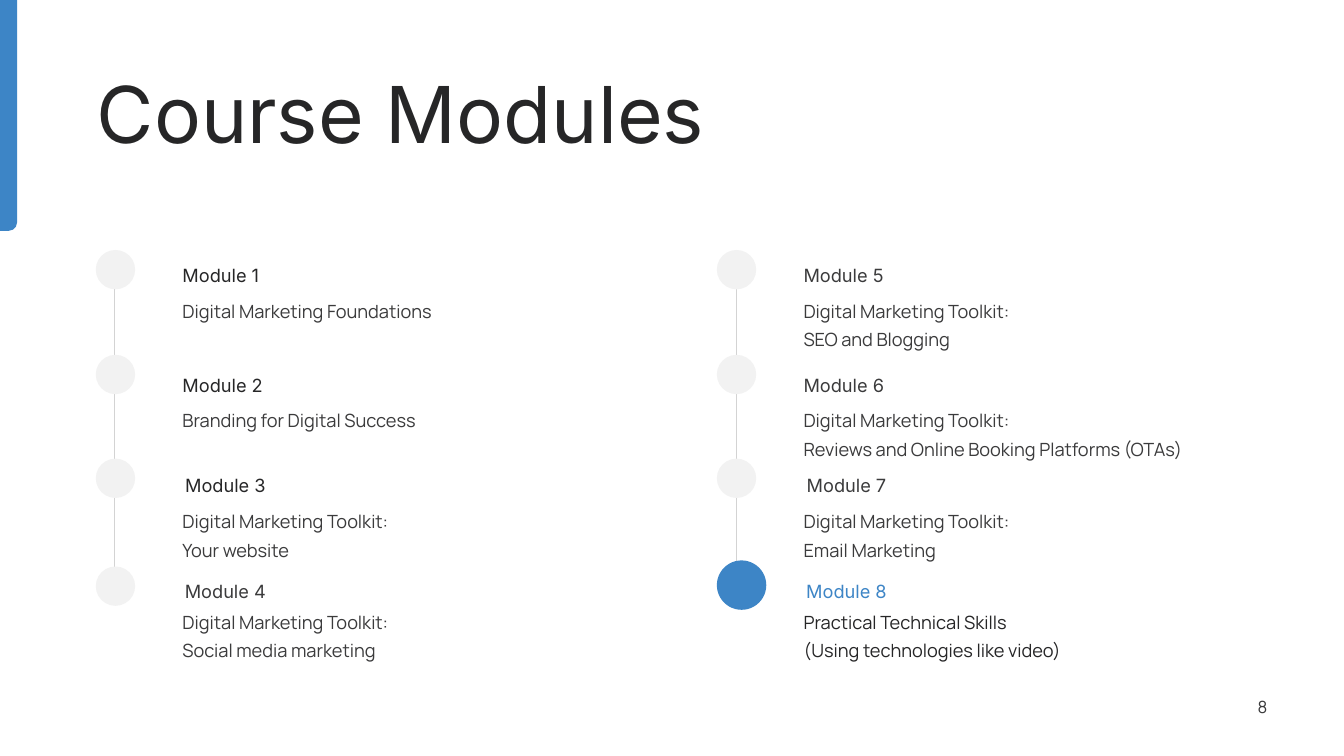
from pptx import Presentation
from pptx.dml.color import RGBColor
from pptx.enum.shapes import MSO_CONNECTOR, MSO_SHAPE
from pptx.enum.text import MSO_ANCHOR, MSO_AUTO_SIZE, PP_ALIGN
from pptx.oxml.ns import qn
from pptx.util import Emu, Pt
from lxml.etree import SubElement

BLUE, INK, TEXT = "3D85C6", "262627", "3B3B3C"
DOT, RULE = "F2F2F2", "D3D3D3"
DOT_SIZE = 39

# One row per step: dot top, heading top, heading width, alignment, body top, body width
ROWS = [
    (248, 256, 122, PP_ALIGN.LEFT, 291, 297),
    (352, 365, 102, PP_ALIGN.LEFT, 400, 410),
    (455, 464, 85, PP_ALIGN.CENTER, 500, 229),
    (562, 569, 85, PP_ALIGN.CENTER, 600, 282),
]

# Column left edge, then heading colour, body colour and body text of each module
COLUMNS = [
    (95, [
        (INK, TEXT, "Digital Marketing Foundations"),
        (INK, TEXT, "Branding for Digital Success"),
        (INK, TEXT, "Digital Marketing Toolkit:\vYour website"),
        (TEXT, TEXT, "Digital Marketing Toolkit:\vSocial media marketing"),
    ]),
    (711, [
        (TEXT, TEXT, "Digital Marketing Toolkit:\vSEO and Blogging"),
        (TEXT, TEXT, "Digital Marketing Toolkit:\v"
                     "Reviews and Online Booking Platforms (OTAs)"),
        (TEXT, TEXT, "Digital Marketing Toolkit:\vEmail Marketing"),
        (BLUE, INK, "Practical Technical Skills\v(Using technologies like video)"),
    ]),
]


def px(length):
    return Emu(length * 9144)  # 100 px to the inch


def color(value):
    return RGBColor.from_string(value)


def style_text(shape, text, size, font, fill, align=PP_ALIGN.LEFT, spacing=None):
    frame = shape.text_frame
    frame.word_wrap = True
    frame.margin_left = frame.margin_right = 0
    frame.margin_top = frame.margin_bottom = 0
    paragraph = frame.paragraphs[0]
    paragraph.text = text
    paragraph.alignment = align
    paragraph.line_spacing = spacing
    paragraph.font.size = Pt(size)
    paragraph.font.name = font
    paragraph.font.color.rgb = color(fill)
    return frame


def add_text(slide, box, text, size, font, fill, **layout):
    shape = slide.shapes.add_textbox(*map(px, box))
    return style_text(shape, text, size, font, fill, **layout)


def add_filled(slide, preset, box, fill):
    shape = slide.shapes.add_shape(preset, *map(px, box))
    shape.shadow.inherit = False
    shape.fill.solid()
    shape.fill.fore_color.rgb = color(fill)
    shape.line.fill.background()
    return shape


def add_rule(slide, x, top, bottom):
    rule = slide.shapes.add_connector(
        MSO_CONNECTOR.STRAIGHT, px(x), px(top), px(x), px(bottom))
    rule.line.color.rgb = color(RULE)
    rule.line.width = Pt(0.75)
    SubElement(rule._element.spPr, qn("a:effectLst"))


def add_accent(slide):
    accent = add_filled(slide, MSO_SHAPE.ROUND_1_RECTANGLE, (0, 0, 17, 229), BLUE)
    accent.adjustments[0] = 0.5
    # Turn the rounded corner to the bottom right
    accent.rotation = 180
    accent._element.spPr.get_or_add_xfrm().set("flipH", "1")


def add_title(slide, text):
    title = slide.shapes.title
    title.left, title.top, title.width, title.height = map(px, (96, 75, 1162, 89))
    frame = style_text(title, text, 56, "Inter", INK, spacing=0.9)
    frame.vertical_anchor = MSO_ANCHOR.TOP
    frame.auto_size = MSO_AUTO_SIZE.NONE


def add_module(slide, left, row, number, module):
    dot_top, heading_top, heading_width, align, body_top, body_width = row
    heading_color, body_color, body = module

    # The current module has a larger blue dot
    if heading_color == BLUE:
        dot, fill = (left, dot_top - 6, DOT_SIZE + 10, DOT_SIZE + 10), BLUE
    else:
        dot, fill = (left, dot_top, DOT_SIZE, DOT_SIZE), DOT
    add_filled(slide, MSO_SHAPE.OVAL, dot, fill)

    text_left = left + 86
    body_height = 50 if "\v" in body else 22
    heading_frame = add_text(
        slide, (text_left, heading_top, heading_width, 22), f"Module {number}",
        13, "Inter", heading_color, align=align, spacing=1.3)
    body_frame = add_text(
        slide, (text_left, body_top, body_width, body_height), body,
        13, "Manrope", body_color, spacing=1.3)
    for frame in (heading_frame, body_frame):
        frame.auto_size = MSO_AUTO_SIZE.SHAPE_TO_FIT_TEXT


def main():
    presentation = Presentation()
    presentation.slide_width, presentation.slide_height = px(1333), px(750)
    slide = presentation.slides.add_slide(presentation.slide_layouts[5])

    add_accent(slide)
    add_title(slide, "Course Modules")

    # Two timelines of four modules
    number = 1
    for left, modules in COLUMNS:
        add_rule(slide, left + DOT_SIZE // 2, 268, 600)
        for row, module in zip(ROWS, modules):
            add_module(slide, left, row, number, module)
            number += 1

    # Page number
    page = add_text(slide, (1208, 681, 49, 40), "8", 12, "Manrope", TEXT,
                    align=PP_ALIGN.RIGHT)
    page.vertical_anchor = MSO_ANCHOR.MIDDLE

    presentation.save("out.pptx")


if __name__ == "__main__":
    main()
